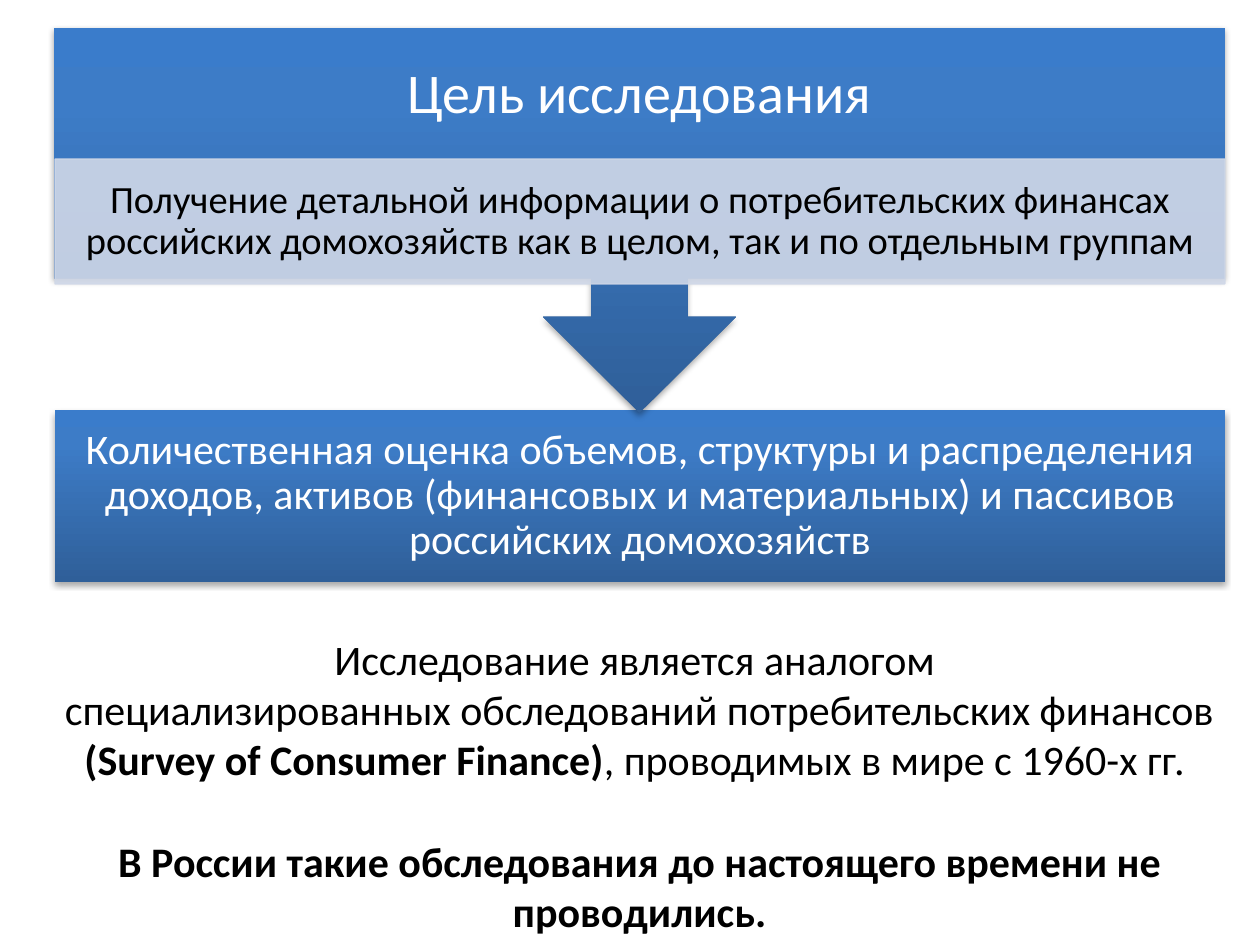
from dataclasses import dataclass

from lxml import etree
from pptx import Presentation
from pptx.dml.color import RGBColor
from pptx.enum.shapes import MSO_SHAPE as Shape
from pptx.enum.text import MSO_ANCHOR as Anchor, PP_ALIGN as Align
from pptx.oxml import parse_xml
from pptx.oxml.ns import nsdecls, qn
from pptx.util import Emu, Pt

PX = 914400 / 126


def px(n):
    return Emu(round(n * PX))


@dataclass(frozen=True)
class Theme:
    font: str = "Calibri"
    white: str = "FFFFFF"
    black: str = "000000"
    band: str = "D0D8E8"
    band_alpha: int = 90
    blues: tuple = ((0, "2F5F99"), (80, "3D7CC7"), (100, "3A7CCB"))
    title: int = 32
    body: int = 24
    detail: int = 22
    tight: float = 0.9


class Deck:
    def __init__(self, theme):
        self.theme = theme
        self.prs = Presentation()
        self.prs.slide_width, self.prs.slide_height = px(1260), px(945)
        self.s = self.prs.slides.add_slide(self.prs.slide_layouts[6])

    def shape(self, kind, x, y, w, h):
        sp = self.s.shapes.add_shape(kind, px(x), px(y), px(w), px(h))
        sp.shadow.inherit = False
        return sp

    def blue(self, kind, *box):
        """Add a shape with the blue gradient and a soft shadow below."""
        sp = self.shape(kind, *box)
        sp.line.fill.background()
        stops = "".join(
            f'<a:gs pos="{pos * 1000}"><a:srgbClr val="{color}"/></a:gs>'
            for pos, color in self.theme.blues)
        pr = sp.element.spPr
        pr.find(qn("a:prstGeom")).addnext(parse_xml(
            f'<a:gradFill {nsdecls("a")} rotWithShape="0"><a:gsLst>{stops}</a:gsLst>'
            '<a:lin ang="16200000" scaled="0"/></a:gradFill>'))
        pr.find(qn("a:effectLst")).append(parse_xml(
            f'<a:outerShdw {nsdecls("a")} blurRad="40000" dist="23000" dir="5400000" '
            f'rotWithShape="0"><a:srgbClr val="{self.theme.black}">'
            '<a:alpha val="35000"/></a:srgbClr></a:outerShdw>'))
        return sp

    def band(self, *box):
        """Add a pale, slightly transparent rectangle."""
        sp = self.shape(Shape.RECTANGLE, *box)
        sp.fill.solid()
        sp.line.width = Pt(0.75)
        for fill in (sp.fill, sp.line.fill):
            fill.solid()
            fill.fore_color.rgb = RGBColor.from_string(self.theme.band)
        for color in sp.element.spPr.iter(qn("a:srgbClr")):
            alpha = etree.SubElement(color, qn("a:alpha"))
            alpha.set("val", str(self.theme.band_alpha * 1000))
        return sp

    def textbox(self, x, y, w, h):
        return self.s.shapes.add_textbox(px(x), px(y), px(w), px(h))

    def label(self, sp, text, size, color, inset_x, inset_y):
        """Set one tight, centred paragraph inside a shape."""
        tf = sp.text_frame
        tf.word_wrap = True
        tf.vertical_anchor = Anchor.MIDDLE
        tf.margin_left = tf.margin_right = px(inset_x)
        tf.margin_top = tf.margin_bottom = px(inset_y)
        p = tf.paragraphs[0]
        p.alignment = Align.CENTER
        p.line_spacing = self.theme.tight
        self.run(p, text, size, color)

    def run(self, p, text, size, color, bold=False):
        r = p.add_run()
        r.text = text
        r.font.name = self.theme.font
        r.font.size = Pt(size)
        r.font.bold = bold
        r.font.color.rgb = RGBColor.from_string(color)


def main():
    theme = Theme()
    deck = Deck(theme)

    tf = deck.textbox(44, 627, 1191, 318).text_frame
    tf.word_wrap = True
    p = tf.paragraphs[0]
    p.alignment = Align.CENTER
    deck.run(p, "Исследование является аналогом ", theme.body, theme.black)
    p.add_line_break()
    for text, bold in (
        ("специализированных обследований потребительских финансов ", False),
        ("(Survey of Consumer Finance)", True),
        (", проводимых в мире с 1960-х гг. ", False),
    ):
        deck.run(p, text, theme.body, theme.black, bold)
    p = tf.add_paragraph()
    p.alignment = Align.CENTER
    p.space_before = Pt(29)
    deck.run(p, "В России такие обследования до настоящего времени не проводились.",
             theme.body, theme.black, bold=True)

    result = deck.blue(Shape.RECTANGLE, 55, 410, 1170, 172)
    deck.label(result, "Количественная оценка объемов, структуры и распределения доходов, "
               "активов (финансовых и материальных) и пассивов российских домохозяйств",
               theme.body, theme.white, 24, 24)

    callout = deck.blue(Shape.UP_ARROW_CALLOUT, 54, 28, 1171, 385)
    callout.rotation = 180
    deck.label(deck.textbox(54, 28, 1171, 135), "Цель исследования",
               theme.title, theme.white, 32, 32)

    goal = deck.band(55, 159, 1170, 125)
    deck.label(goal, "Получение детальной информации о потребительских финансах "
               "российских домохозяйств как в целом, так и по отдельным группам",
               theme.detail, theme.black, 21, 4)

    deck.prs.save("out.pptx")


if __name__ == "__main__":
    main()
